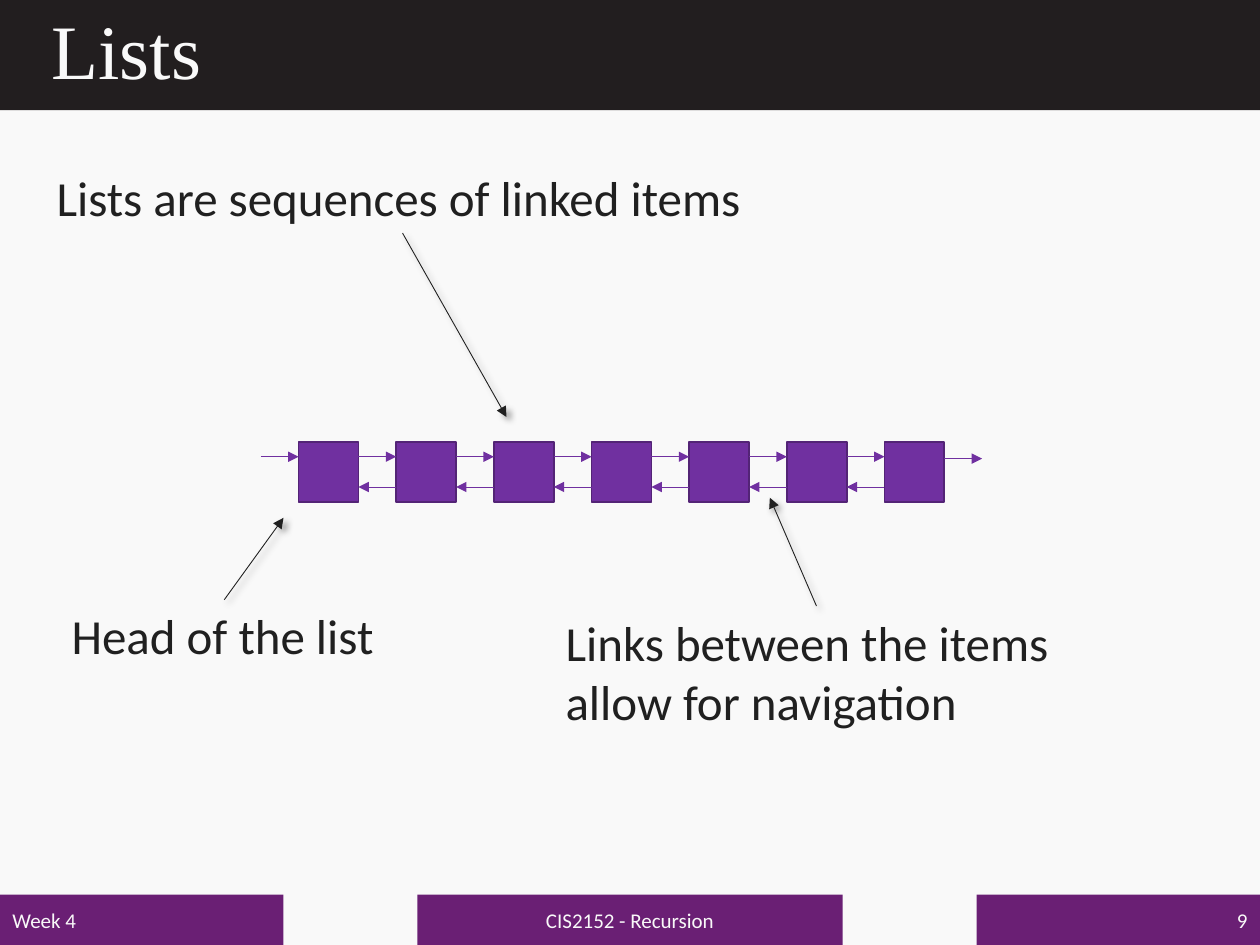
from dataclasses import dataclass
from lxml.etree import SubElement
from pptx import Presentation
from pptx.dml.color import RGBColor
from pptx.enum.shapes import MSO_CONNECTOR, MSO_SHAPE
from pptx.enum.text import MSO_ANCHOR, PP_ALIGN
from pptx.oxml.ns import qn
from pptx.util import Emu, Inches, Pt


@dataclass(frozen=True)
class Theme:
    paper: str = "F9F9F9"
    band: str = "221E1F"
    foot: str = "6A1F74"
    node: str = "7030A0"
    edge: str = "532476"
    ink: str = "202020"
    serif: str = "Times New Roman"
    sans: str = "Calibri"
    title: int = 44
    body: int = 28
    small: int = 12
    thin: float = 0.5


LOOK = Theme()
WIDTH, HEIGHT = Inches(10), Inches(7.5)
COLS, ROWS = 100, 75


def col(count):
    return Emu(round(WIDTH * count / COLS))


def row(count):
    return Emu(round(HEIGHT * count / ROWS))


def place(left, top, width, height):
    return col(left), row(top), col(width), row(height)


def tint(code):
    return RGBColor.from_string(code)


def write(shape, text, size=LOOK.body, color=LOOK.ink, font=LOOK.sans,
          align=PP_ALIGN.LEFT, anchor=MSO_ANCHOR.TOP, wrap=True, lead=None):
    frame = shape.text_frame
    frame.word_wrap = wrap
    frame.vertical_anchor = anchor
    line = frame.paragraphs[0]
    line.alignment = align
    line.line_spacing = lead
    run = line.add_run()
    run.text = text
    run.font.size = Pt(size)
    run.font.name = font
    run.font.color.rgb = tint(color)


def block(slide, area, fill, edge=None):
    shape = slide.shapes.add_shape(MSO_SHAPE.RECTANGLE, *place(*area))
    shape.shadow.inherit = False
    shape.fill.solid()
    shape.fill.fore_color.rgb = tint(fill)
    if edge:
        shape.line.color.rgb = tint(edge)
        shape.line.width = Pt(1)
    else:
        shape.line.fill.background()
    return shape


def label(slide, area, text, **style):
    shape = slide.shapes.add_textbox(*place(*area))
    write(shape, text, **style)
    return shape


def shade(effects):
    shadow = SubElement(effects, qn("a:outerShdw"), blurRad=str(Pt(4)),
                        dist=str(Pt(3)), dir="2700000", algn="tl", rotWithShape="0")
    black = SubElement(shadow, qn("a:srgbClr"), val="000000")
    SubElement(black, qn("a:alpha"), val="40000")


def arrow(slide, start, end, color, shadow=False):
    link = slide.shapes.add_connector(
        MSO_CONNECTOR.STRAIGHT, col(start[0]), row(start[1]), col(end[0]), row(end[1]))
    link.line.color.rgb = tint(color)
    link.line.width = Pt(LOOK.thin)
    SubElement(link.line._get_or_add_ln(), qn("a:tailEnd"), type="triangle")
    effects = SubElement(link._element.spPr, qn("a:effectLst"))
    if shadow:
        shade(effects)
    return link


def callout(slide, area, text, target, side, wrap=True):
    note = label(slide, area, text, wrap=wrap)
    left, top, width, height = area
    start = left + width / 2, top + (height if side == 2 else 0)
    arrow(slide, start, target, LOOK.ink, shadow=True).begin_connect(note, side)


def chain(slide, count=7, left=23.7, top=35.1, size=4.75, pitch=7.75):
    gap = pitch - size
    ahead, back = top + 1.15, top + 3.55
    for index in range(count):
        start = left + index * pitch
        block(slide, (start, top, size, size), LOOK.node, LOOK.edge)
        arrow(slide, (start - gap, ahead), (start, ahead), LOOK.node)
        if index:
            arrow(slide, (start, back), (start - gap, back), LOOK.node)
    end = left + count * pitch - gap
    arrow(slide, (end, ahead + 0.15), (end + gap, ahead + 0.15), LOOK.node)


def header(slide, text):
    block(slide, (0, 0, COLS, 8.75), LOOK.band)
    label(slide, (3.1, 0, 93.9, 8.6), text, size=LOOK.title, color=LOOK.paper,
          font=LOOK.serif, anchor=MSO_ANCHOR.MIDDLE, lead=0.9)


def footer(slide, week, course, page):
    side, mid, high = 22.5, 33.75, 4
    parts = [(0, side, week, PP_ALIGN.LEFT),
             ((COLS - mid) / 2, mid, course, PP_ALIGN.CENTER),
             (COLS - side, side, page, PP_ALIGN.RIGHT)]
    for left, width, text, align in parts:
        bar = block(slide, (left, ROWS - high, width, high), LOOK.foot)
        write(bar, text, size=LOOK.small, color=LOOK.paper, align=align,
              anchor=MSO_ANCHOR.MIDDLE)


def main():
    deck = Presentation()
    deck.slide_width, deck.slide_height = WIDTH, HEIGHT
    slide = deck.slides.add_slide(deck.slide_layouts[6])
    slide.background.fill.solid()
    slide.background.fill.fore_color.rgb = tint(LOOK.paper)
    header(slide, "Lists")
    footer(slide, "Week 4", "CIS2152 - Recursion", "9")
    chain(slide)
    callout(slide, (3.5, 12.8, 56.9, 5.7), "Lists are sequences of linked items",
            (40.2, 33.1), 2, wrap=False)
    callout(slide, (4.7, 47.6, 26.2, 5.7), "Head of the list",
            (22.5, 41.1), 0, wrap=False)
    callout(slide, (43.9, 48.1, 41.8, 10.4),
            "Links between the items allow for navigation", (61.1, 39.5), 0)
    deck.save("out.pptx")


if __name__ == "__main__":
    main()
